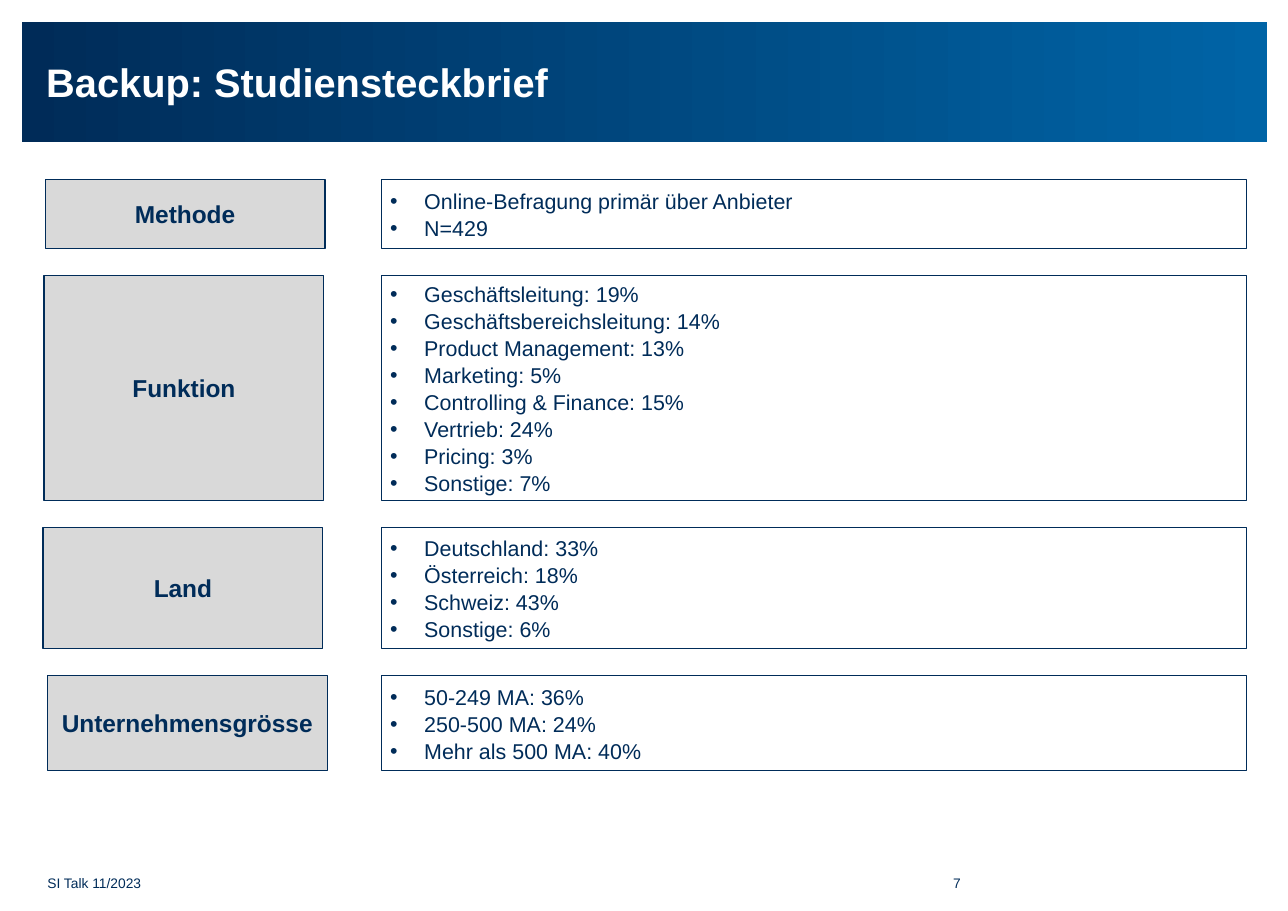
from lxml.etree import SubElement
from pptx import Presentation
from pptx.dml.color import RGBColor
from pptx.enum.shapes import MSO_SHAPE
from pptx.enum.text import MSO_ANCHOR, PP_ALIGN
from pptx.oxml.ns import qn
from pptx.util import Inches, Pt

NAVY = RGBColor(0x00, 0x2C, 0x59)
DARK = RGBColor(0x00, 0x2B, 0x58)
BLUE = RGBColor(0x00, 0x64, 0xA6)
GREY = RGBColor(0xD9, 0xD9, 0xD9)
WHITE = RGBColor(0xFF, 0xFF, 0xFF)

deck = Presentation()
deck.slide_width, deck.slide_height = Inches(11.69), Inches(8.27)
slide = deck.slides.add_slide(deck.slide_layouts[5])
shapes = slide.shapes


def area(x, y, w, h):
    """Turn percent of the slide's width and height into lengths."""
    wide, high = deck.slide_width / 100, deck.slide_height / 100
    return int(x * wide), int(y * high), int(w * wide), int(h * high)


def write(shape, text, size, color=NAVY, bold=False, align=PP_ALIGN.LEFT,
          inset=(0, 0), bullet=False):
    frame = shape.text_frame
    frame.word_wrap = True
    frame.vertical_anchor = MSO_ANCHOR.MIDDLE
    frame.margin_left = frame.margin_right = Inches(inset[0])
    frame.margin_top = frame.margin_bottom = Inches(inset[1])
    frame.text = text
    for para in frame.paragraphs:
        para.alignment = align
        if bullet:
            para.line_spacing = 1.05
            props = para._p.get_or_add_pPr()
            props.set("marL", str(Inches(0.31)))
            props.set("indent", str(-Inches(0.31)))
            SubElement(props, qn("a:buFont"), typeface="Arial")
            SubElement(props, qn("a:buChar"), char="•")
        font = para.runs[0].font
        font.name, font.size, font.bold = "Arial", Pt(size), bold
        font.color.rgb = color


# Header
title = shapes.title
title.left, title.top, title.width, title.height = area(3.59, 3.39, 92.9, 11.12)
write(title, "Backup: Studiensteckbrief", 26, color=WHITE, bold=True)

banner = shapes.add_shape(MSO_SHAPE.RECTANGLE, *area(1.71, 2.42, 96.66, 13.18))
banner.shadow.inherit = False
banner.line.fill.background()
banner.fill.gradient()
banner.fill.gradient_angle = 0
for stop, color, place in zip(banner.fill.gradient_stops, (DARK, BLUE), (0, 1)):
    stop.color.rgb, stop.position = color, place
title.element.addprevious(banner.element)

# Profile rows: left edge of the label, label, facts
ROWS = [
    (3.51, "Methode", ["Online-Befragung primär über Anbieter", "N=429"]),
    (3.42, "Funktion", [
        "Geschäftsleitung: 19%", "Geschäftsbereichsleitung: 14%",
        "Product Management: 13%", "Marketing: 5%",
        "Controlling & Finance: 15%", "Vertrieb: 24%",
        "Pricing: 3%", "Sonstige: 7%"]),
    (3.34, "Land", ["Deutschland: 33%", "Österreich: 18%",
                    "Schweiz: 43%", "Sonstige: 6%"]),
    (3.68, "Unternehmensgrösse", ["50-249 MA: 36%", "250-500 MA: 24%",
                                  "Mehr als 500 MA: 40%"]),
]
LINE, PAD, GAP = 2.84, 1.93, 2.96
top = 19.71
for left, label, facts in ROWS:
    high = PAD + LINE * len(facts)
    cells = [
        (left, 21.73, GREY, label,
         dict(size=16, bold=True, align=PP_ALIGN.CENTER, inset=(0.02, 0.05))),
        (29.6, 67.15, WHITE, "\n".join(facts),
         dict(size=14, inset=(0.08, 0.08), bullet=True)),
    ]
    for x, wide, color, text, style in cells:
        box = shapes.add_shape(MSO_SHAPE.RECTANGLE, *area(x, top, wide, high))
        box.shadow.inherit = False
        box.fill.solid()
        box.fill.fore_color.rgb = color
        box.line.color.rgb, box.line.width = NAVY, Pt(0.75)
        write(box, text, **style)
    top += high + GAP

# Footer
for x, wide, text, align in [(3.68, 14.11, "SI Talk 11/2023", PP_ALIGN.LEFT),
                             (67.15, 7.45, "7", PP_ALIGN.RIGHT)]:
    note = shapes.add_textbox(*area(x, 96.01, wide, 1.81))
    write(note, text, 9, align=align)

deck.save("out.pptx")
